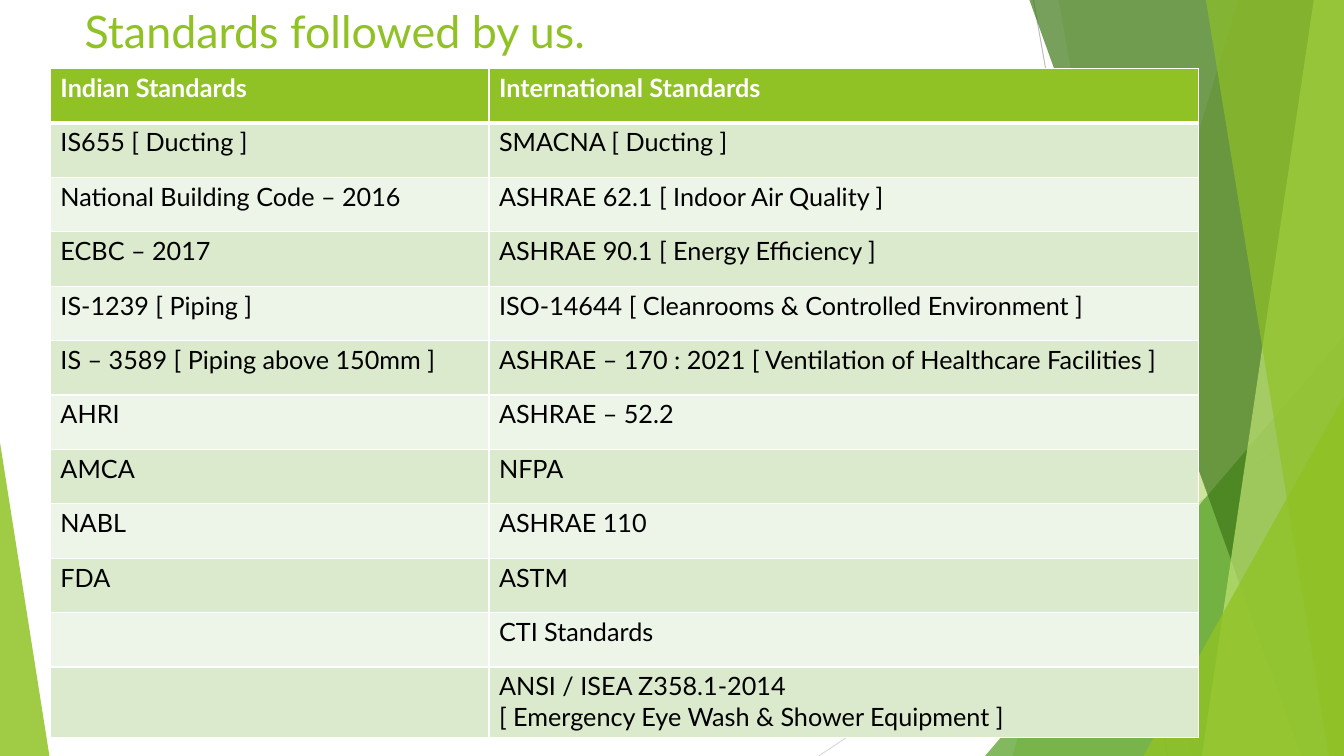
import pptx
import pptx.util
import pptx.dml.color
import pptx.enum.shapes
import pptx.enum.text
import pptx.oxml
import pptx.oxml.ns
from lxml import etree

Inches = pptx.util.Inches
Pt = pptx.util.Pt
RGB = pptx.dml.color.RGBColor
qn = pptx.oxml.ns.qn

# Content
FONT = "Lato"
TITLE = "Standards followed by us."
ROWS = [
    ("Indian Standards", "International Standards"),
    ("IS655 [ Ducting ]", "SMACNA [ Ducting ]"),
    ("National Building Code – 2016", "ASHRAE 62.1 [ Indoor Air Quality ]"),
    ("ECBC – 2017", "ASHRAE 90.1 [ Energy Efficiency ]"),
    ("IS-1239 [ Piping ]", "ISO-14644 [ Cleanrooms & Controlled Environment ]"),
    ("IS – 3589 [ Piping above 150mm ]",
     "ASHRAE – 170 : 2021 [ Ventilation of Healthcare Facilities ]"),
    ("AHRI", "ASHRAE – 52.2"),
    ("AMCA", "NFPA"),
    ("NABL", "ASHRAE 110"),
    ("FDA", "ASTM"),
    ("", "CTI Standards"),
    ("", "ANSI / ISEA Z358.1-2014\n[ Emergency Eye Wash & Shower Equipment ]"),
]

# Colours
LIME = RGB(0x90, 0xC2, 0x25)
GREEN = RGB(0x53, 0x9F, 0x20)
DARK = RGB(0x3E, 0x78, 0x18)
PALE = RGB(0xC0, 0xE3, 0x74)
BAND = RGB(0xDB, 0xE9, 0xCD)
LIGHT = RGB(0xED, 0xF4, 0xE8)
GREY = RGB(0xBE, 0xBE, 0xBE)
SILVER = RGB(0xD9, 0xD9, 0xD9)
WHITE = RGB(0xFF, 0xFF, 0xFF)
BLACK = RGB(0, 0, 0)

# Backdrop: lines as (x1, y1, x2, y2, colour), facets as (points, colour, opacity %)
W, H = 13.33, 7.5
LINES = [(10.25, 0, 11.58, H, GREY), (W, 4.03, 8.12, H, SILVER)]
FACETS = [
    ([(W, 0), (12.28, 0), (10.04, H), (W, H)], LIME, 30),
    ([(W, 0), (10.5, 0), (11.82, H), (W, H)], LIME, 20),
    ([(W, 3.33), (9.77, H), (W, H)], GREEN, 72),
    ([(W, 0), (10.21, 0), (12.91, H), (W, H)], DARK, 70),
    ([(W, 0), (13.03, 0), (11.92, H), (W, H)], PALE, 70),
    ([(W, 0), (11.96, 0), (13.18, H), (W, H)], LIME, 65),
    ([(W, 3.93), (11.34, H), (W, H)], LIME, 80),
    ([(0, 4.39), (0, H), (0.49, H)], LIME, 85),
]

# Table measures
LEFT, TOP = 0.5, 0.68
COLS = (4.35, 7.04)
ROW, LAST = 0.54, 0.7


def add_line(slide, x1, y1, x2, y2, color):
    line = slide.shapes.add_connector(
        pptx.enum.shapes.MSO_CONNECTOR.STRAIGHT,
        Inches(x1), Inches(y1), Inches(x2), Inches(y2))
    line.line.color.rgb = color
    line.line.width = Pt(0.72)
    etree.SubElement(line._element.spPr, qn("a:effectLst"))


def add_facet(slide, points, color, alpha):
    spots = [(Inches(x), Inches(y)) for x, y in points]
    pen = slide.shapes.build_freeform(*spots[0])
    pen.add_line_segments(spots[1:], close=True)
    facet = pen.convert_to_shape()
    facet.shadow.inherit = False
    facet.fill.solid()
    facet.fill.fore_color.rgb = color
    facet.line.fill.background()
    tint = facet._element.spPr.find(qn("a:solidFill"))[0]
    etree.SubElement(tint, qn("a:alpha"), val=str(alpha * 1000))


def set_font(par, size, color, bold=False):
    par.font.name = FONT
    par.font.size = Pt(size)
    par.font.color.rgb = color
    par.font.bold = bold


def add_edges(cell, widths):
    props = cell._tc.get_or_add_tcPr()
    for i, (side, width) in enumerate(widths.items()):
        edge = etree.Element(qn("a:ln" + side), w=str(Pt(width)))
        fill = etree.SubElement(edge, qn("a:solidFill"))
        etree.SubElement(fill, qn("a:srgbClr"), val=str(WHITE))
        props.insert(i, edge)


def add_title(slide):
    box = slide.shapes.add_textbox(Inches(0.83), Inches(0.03), Inches(5.17), Inches(0.56))
    frame = box.text_frame
    frame.word_wrap = True
    frame.margin_left = Inches(0.01)
    frame.margin_top = Inches(0.01)
    frame.margin_right = frame.margin_bottom = 0
    frame.text = TITLE
    set_font(frame.paragraphs[0], 32, LIME)


def add_grid(slide):
    high = ROW * (len(ROWS) - 1) + LAST
    grid = slide.shapes.add_table(
        len(ROWS), len(COLS), Inches(LEFT), Inches(TOP),
        Inches(sum(COLS)), Inches(high)).table
    grid.horz_banding = False
    for col, width in zip(grid.columns, COLS):
        col.width = Inches(width)
    for r, texts in enumerate(ROWS):
        grid.rows[r].height = Inches(LAST if r == len(ROWS) - 1 else ROW)
        head = r == 0
        shade = LIME if head else BAND if r % 2 else LIGHT
        for c, text in enumerate(texts):
            cell = grid.cell(r, c)
            cell.margin_left = Inches(0.1)
            cell.margin_top = Inches(0.04)
            cell.margin_right = cell.margin_bottom = 0
            cell.fill.solid()
            cell.fill.fore_color.rgb = shade
            cell.text = text
            for par in cell.text_frame.paragraphs:
                set_font(par, 18, WHITE if head else BLACK, head)
            add_edges(cell, {"L": 1, "R": 1, "T": 3 if r == 1 else 1, "B": 3 if head else 1})


def main():
    deck = pptx.Presentation()
    deck.slide_width, deck.slide_height = Inches(W), Inches(H)
    slide = deck.slides.add_slide(deck.slide_layouts[6])
    for line in LINES:
        add_line(slide, *line)
    for facet in FACETS:
        add_facet(slide, *facet)
    add_title(slide)
    add_grid(slide)
    deck.save("out.pptx")


if __name__ == "__main__":
    main()
